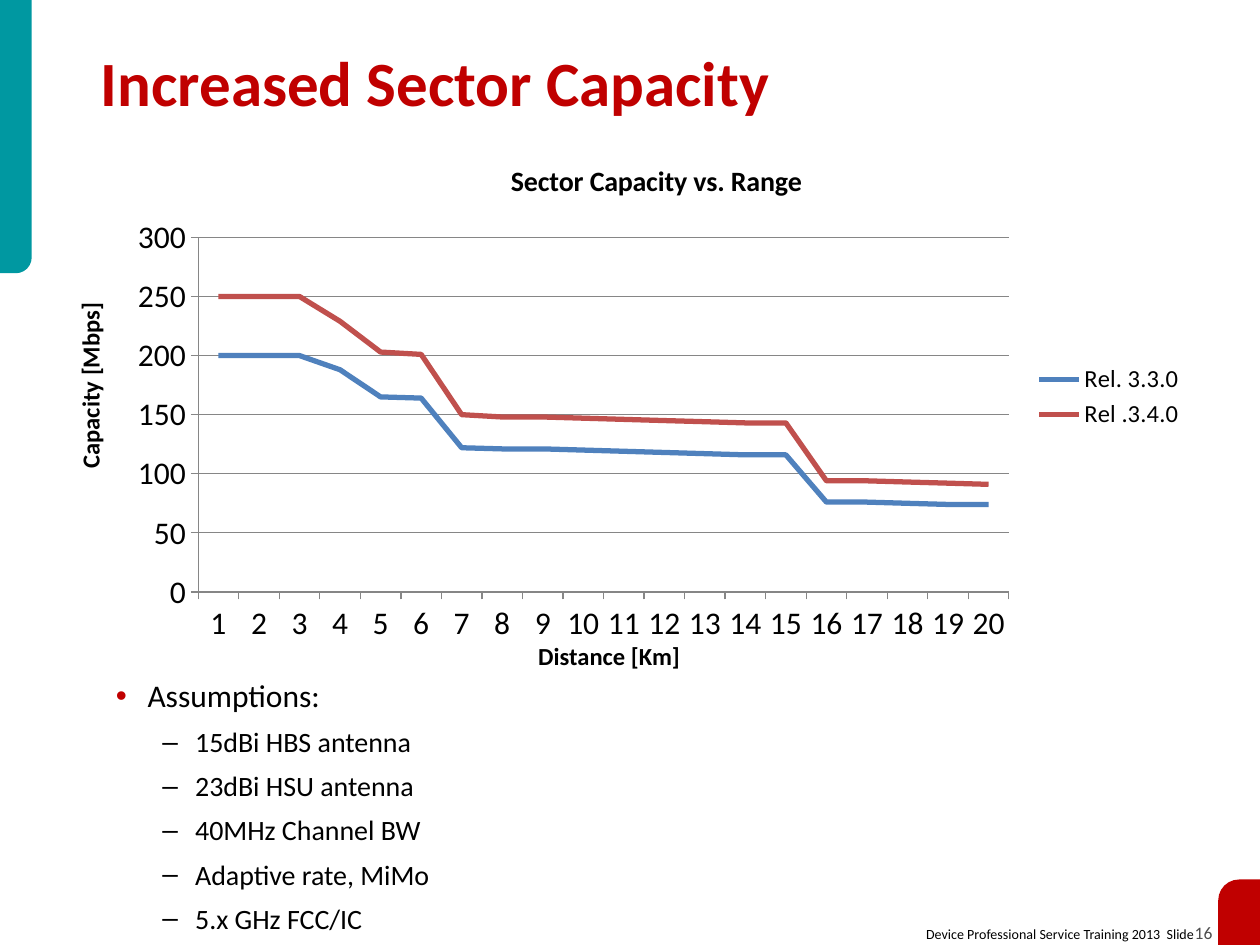
from lxml.etree import SubElement
from pptx import Presentation
from pptx.chart.data import CategoryChartData
from pptx.dml.color import RGBColor
from pptx.enum.chart import XL_CHART_TYPE, XL_LEGEND_POSITION, XL_TICK_MARK
from pptx.enum.shapes import MSO_SHAPE
from pptx.enum.text import MSO_ANCHOR, MSO_AUTO_SIZE, PP_ALIGN
from pptx.oxml import parse_xml
from pptx.oxml.ns import nsdecls, qn
from pptx.util import Cm, Pt

# Content
TITLE = "Increased Sector Capacity"
CHART_TITLE = "Sector Capacity vs. Range"
DISTANCES = [str(km) for km in range(1, 21)]
CAPACITY = [
    ("Rel. 3.3.0", "4F81BD", [200, 200, 200, 188, 165, 164, 122, 121, 121, 120,
                              119, 118, 117, 116, 116, 76, 76, 75, 74, 74]),
    ("Rel .3.4.0", "C0504D", [250, 250, 250, 229, 203, 201, 150, 148, 148, 147,
                              146, 145, 144, 143, 143, 94, 94, 93, 92, 91]),
]
ASSUMPTIONS = [
    (0, "Assumptions:"),
    (1, "15dBi HBS antenna"),
    (1, "23dBi HSU antenna"),
    (1, "40MHz Channel BW"),
    (1, "Adaptive rate, MiMo"),
    (1, "5.x GHz FCC/IC"),
]
# text, centre x, centre y, width, rotation
AXIS_CAPTIONS = [
    ("Distance [Km]", 12.28, 13.23, 6.32, 0),
    ("Capacity [Mbps]", 1.82, 7.77, 7.19, 270),
]
# left, top, width, height, flip, colour
CORNERS = [
    (0, 0, 0.64, 5.51, "flipV", "teal"),
    (24.56, 17.73, 0.84, 1.32, "flipH", "red"),
]
FOOTER = [("Device Professional Service Training 2013  Slide", 8, "black"),
          ("16", 10, "grey")]

THEME = {
    "font": "Calibri",
    "teal": "0098A1", "red": "C00000", "black": "000000",
    "grey": "4D4D4D", "axis": "868686",
    "title": 36, "chart": 18, "chart_title": 16, "legend": 14, "caption": 14,
}
# bullet, bullet colour, text size, left margin, hanging indent
LEVELS = [("•", "red", 18, 0.64, 0.64), ("–", "black", 16, 1.6, 0.66)]
# Inner plot area as fractions of the chart
PLOT = {"x": 0.076, "y": 0.19, "w": 0.75, "h": 0.69}


def colour(name):
    return RGBColor.from_string(THEME.get(name, name))


def style(font, size, name="black", bold=False):
    font.name, font.size, font.bold = THEME["font"], Pt(size), bold
    font.color.rgb = colour(name)


def add_run(paragraph, text, size, name="black", bold=False):
    run = paragraph.add_run()
    run.text = text
    style(run.font, size, name, bold)


def place(part, *box):
    part.left, part.top, part.width, part.height = map(Cm, box)


def add_bullet(paragraph, mark, name, margin, hanging):
    props = paragraph._p.get_or_add_pPr()
    props.set("marL", str(Cm(margin)))
    props.set("indent", str(-Cm(hanging)))
    mark_colour = SubElement(props, qn("a:buClr"))
    SubElement(mark_colour, qn("a:srgbClr"), val=THEME[name])
    SubElement(props, qn("a:buFont"), typeface="Arial")
    SubElement(props, qn("a:buChar"), char=mark)


prs = Presentation()
prs.slide_width, prs.slide_height = Cm(25.4), Cm(19.05)
slide = prs.slides.add_slide(prs.slide_layouts[1])
shapes = slide.shapes

# Rounded corner accents
for *box, flip, fill in CORNERS:
    corner = shapes.add_shape(MSO_SHAPE.ROUND_1_RECTANGLE, *map(Cm, box))
    corner.adjustments[0] = 0.5
    corner.shadow.inherit = False
    corner.fill.solid()
    corner.fill.fore_color.rgb = colour(fill)
    corner.line.fill.background()
    corner._element.spPr.find(qn("a:xfrm")).set(flip, "1")

# Footer with slide number
footer = shapes.add_textbox(Cm(18.24), Cm(18.47), Cm(6.45), Cm(0.69)).text_frame
footer.word_wrap = False
footer.paragraphs[0].alignment = PP_ALIGN.RIGHT
for text, size, name in FOOTER:
    add_run(footer.paragraphs[0], text, size, name)

# Title
heading = shapes.title
place(heading, 1.78, 0.86, 18.8, 1.8)
heading.text_frame.vertical_anchor = MSO_ANCHOR.MIDDLE
heading.text_frame.auto_size = MSO_AUTO_SIZE.NONE
heading_line = heading.text_frame.paragraphs[0]
heading_line.alignment = PP_ALIGN.LEFT
heading_line.line_spacing = 0.85
add_run(heading_line, TITLE, THEME["title"], "red", True)

# Assumptions list
assumptions = slide.placeholders[1]
place(assumptions, 2.08, 13.51, 9.07, 5.54)
assumptions.text_frame.auto_size = MSO_AUTO_SIZE.NONE
for i, (level, text) in enumerate(ASSUMPTIONS):
    frame = assumptions.text_frame
    item = frame.add_paragraph() if i else frame.paragraphs[0]
    mark, mark_colour, size, margin, hanging = LEVELS[level]
    item.level = level
    add_bullet(item, mark, mark_colour, margin, hanging)
    item.space_before = Pt(6 if i else 0)
    add_run(item, text, size)

# Capacity chart
data = CategoryChartData()
data.categories = DISTANCES
for name, _, values in CAPACITY:
    data.add_series(name, values)
chart = shapes.add_chart(XL_CHART_TYPE.LINE, Cm(2.34), Cm(2.82),
                         Cm(21.79), Cm(10.36), data).chart
style(chart.font, THEME["chart"])
chart.has_title = True
add_run(chart.chart_title.text_frame.paragraphs[0], CHART_TITLE,
        THEME["chart_title"], bold=True)
chart.chart_title.include_in_layout = False
chart.has_legend = True
chart.legend.position = XL_LEGEND_POSITION.RIGHT
chart.legend.include_in_layout = False
style(chart.legend.font, THEME["legend"])
chart.plots[0].vary_by_categories = False
for series, (_, line, _) in zip(chart.plots[0].series, CAPACITY):
    series.smooth = False
    series.format.line.width = Pt(3)
    series.format.line.color.rgb = colour(line)

distance_axis, capacity_axis = chart.category_axis, chart.value_axis
capacity_axis.minimum_scale, capacity_axis.maximum_scale = 0, 300
capacity_axis.major_unit = 50
capacity_axis.has_major_gridlines = True
for axis in (distance_axis, capacity_axis):
    axis.major_tick_mark = XL_TICK_MARK.OUTSIDE
    axis.format.line.color.rgb = colour("axis")
capacity_axis.major_gridlines.format.line.color.rgb = colour("axis")

# Fixed plot area
plot_area = chart._chartSpace.chart.plotArea
for automatic in plot_area.findall(qn("c:layout")):
    plot_area.remove(automatic)
sizes = "".join(f'<c:{key} val="{value}"/>' for key, value in PLOT.items())
plot_area.insert(0, parse_xml(
    f'<c:layout {nsdecls("c")}><c:manualLayout><c:layoutTarget val="inner"/>'
    f'<c:xMode val="edge"/><c:yMode val="edge"/>{sizes}'
    '</c:manualLayout></c:layout>'))

# Axis captions
CAPTION_HEIGHT = 0.86
for text, x, y, width, rotation in AXIS_CAPTIONS:
    caption = shapes.add_textbox(Cm(x - width / 2), Cm(y - CAPTION_HEIGHT / 2),
                                 Cm(width), Cm(CAPTION_HEIGHT))
    caption.rotation = rotation
    caption.text_frame.word_wrap = True
    caption.text_frame.paragraphs[0].alignment = PP_ALIGN.CENTER
    add_run(caption.text_frame.paragraphs[0], text, THEME["caption"], bold=True)

prs.save("out.pptx")
